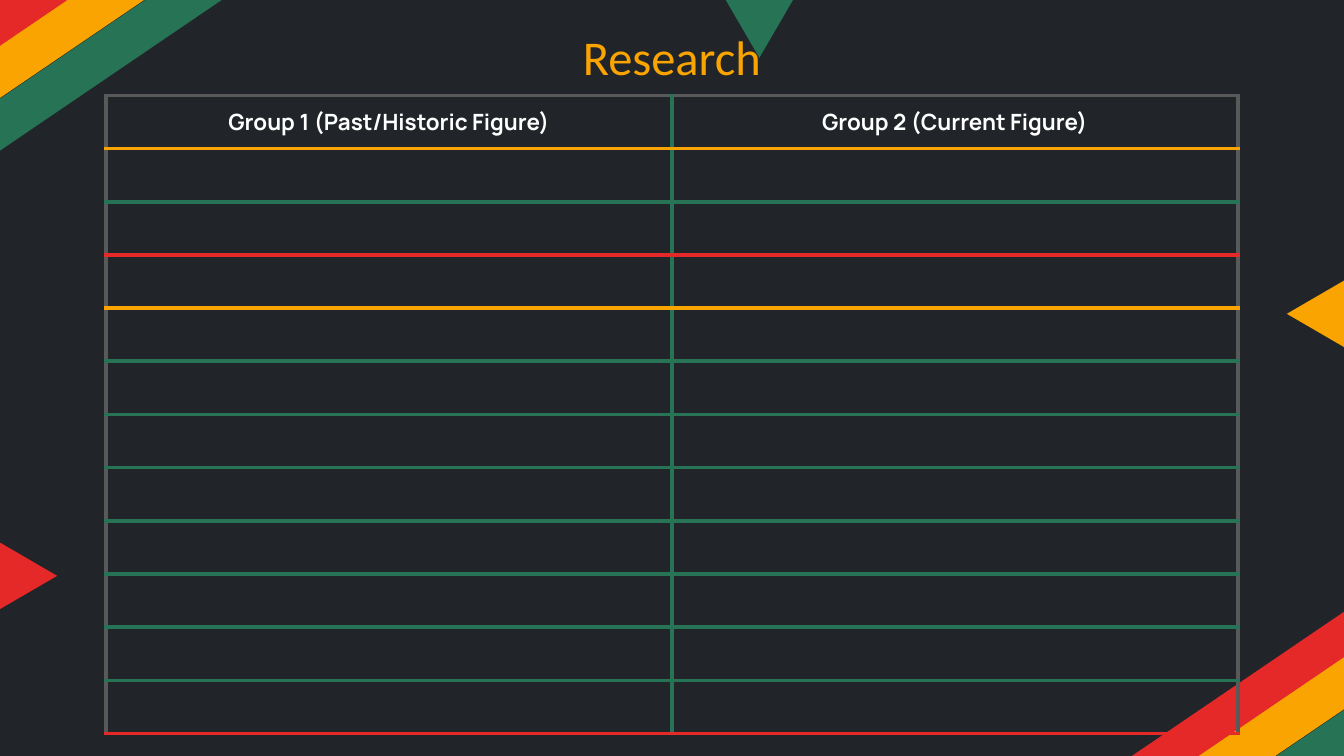
from lxml import etree
from pptx import Presentation
from pptx import util as u
from pptx.dml.color import RGBColor
from pptx.enum import shapes, text
from pptx.oxml import ns

# Content
TITLE = "Research"
HEADERS = ["Group 1 (Past/Historic Figure)", "Group 2 (Current Figure)"]
COLORS = {"dark": "212529", "red": "E52828", "gold": "FAA401",
          "green": "277355", "gray": "595959", "white": "FFFFFF"}

# Horizontal rules from the top edge to the bottom edge of the table
RULES = ["gray", "gold", "green", "red", "gold"] + ["green"] * 7 + ["red"]
SIDES = ["gray", "green", "gray"]

# Corner stripes: left, top, color; the second corner repeats them shifted
STRIPES = [(0.07, -1.35, "red"), (0.23, -1.12, "gold"), (0.41, -0.85, "green")]
CORNERS = [(0, 0), (9.13, 5.14)]
STRIPE_SIZE = (0.32, 2.78)

# Edge triangles: left, top, rotation, color
TRIANGLES = [(-0.04, 4.07, 90, "red"), (5.4, 0, 180, "green"),
             (9.54, 2.12, 270, "gold")]
TRIANGLE_SIZE = (0.5, 0.43)

# Grid of a 16:9 slide
WIDTH = 10
HEIGHT = WIDTH * 9 / 16
MARGIN = 0.79
TABLE_WIDTH, TABLE_TOP = WIDTH - 2 * MARGIN, 0.71
ROWS, COLUMNS = len(RULES) - 1, len(HEADERS)
TABLE_HEIGHT = 4.75
BORDER = 2.25


def color(name):
    return RGBColor.from_string(COLORS[name])


def add_shape(slide, kind, left, top, size, rotation, fill):
    shape = slide.shapes.add_shape(kind, *map(u.Inches, (left, top, *size)))
    shape.rotation = rotation
    shape.shadow.inherit = False
    shape.fill.solid()
    shape.fill.fore_color.rgb = color(fill)
    shape.line.fill.background()


def write(paragraph, words, font_name, size, name, bold=False):
    paragraph.text = words
    paragraph.alignment = text.PP_ALIGN.CENTER
    font = paragraph.font
    font.name, font.size, font.bold = font_name, u.Pt(size), bold
    font.color.rgb = color(name)


def set_borders(cell, **borders):
    properties = cell._tc.get_or_add_tcPr()
    for side, name in borders.items():
        line = etree.SubElement(properties, ns.qn(f"a:ln{side}"),
                                w=str(u.Pt(BORDER)))
        fill = etree.SubElement(line, ns.qn("a:solidFill"))
        etree.SubElement(fill, ns.qn("a:srgbClr"), val=COLORS[name])


def main():
    presentation = Presentation()
    presentation.slide_width = u.Inches(WIDTH)
    presentation.slide_height = u.Inches(HEIGHT)
    slide = presentation.slides.add_slide(presentation.slide_layouts[6])
    slide.background.fill.solid()
    slide.background.fill.fore_color.rgb = color("dark")

    # Decorations
    for x, y in CORNERS:
        for left, top, fill in STRIPES:
            add_shape(slide, shapes.MSO_SHAPE.RECTANGLE, left + x, top + y,
                      STRIPE_SIZE, 235.8, fill)
    for left, top, rotation, fill in TRIANGLES:
        add_shape(slide, shapes.MSO_SHAPE.ISOSCELES_TRIANGLE, left, top,
                  TRIANGLE_SIZE, rotation, fill)

    # Title
    box = slide.shapes.add_textbox(*map(u.Inches, (MARGIN, 0.1, TABLE_WIDTH, 0.43)))
    frame = box.text_frame
    frame.word_wrap = True
    frame.vertical_anchor = text.MSO_ANCHOR.TOP
    frame.margin_top = frame.margin_bottom = u.Inches(0.1)
    write(frame.paragraphs[0], TITLE, "Calibri", 26, "gold")

    # Table
    table = slide.shapes.add_table(
        ROWS, COLUMNS, *map(u.Inches, (MARGIN, TABLE_TOP, TABLE_WIDTH,
                                       TABLE_HEIGHT))).table
    table.first_row = table.horz_banding = False
    for r in range(ROWS):
        for c in range(COLUMNS):
            cell = table.cell(r, c)
            cell.margin_top = cell.margin_bottom = 0
            cell.vertical_anchor = text.MSO_ANCHOR.MIDDLE
            set_borders(cell, L=SIDES[c], R=SIDES[c + 1],
                        T=RULES[r], B=RULES[r + 1])
            cell.fill.background()
    for c, header in enumerate(HEADERS):
        write(table.cell(0, c).text_frame.paragraphs[0], header,
              "Manrope", 12, "white", bold=True)

    presentation.save("out.pptx")


if __name__ == "__main__":
    main()
